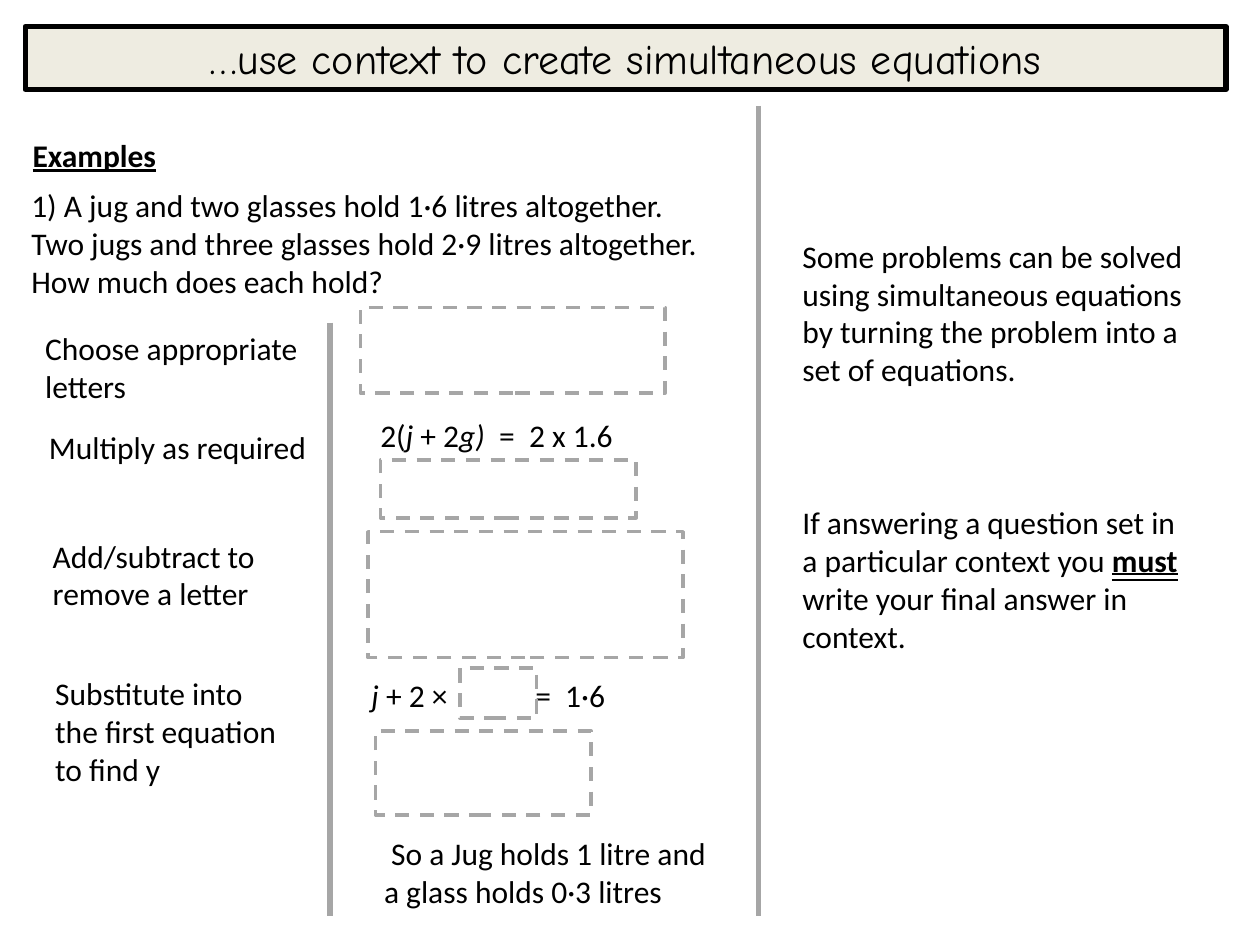
from dataclasses import dataclass

from lxml import etree
from pptx import Presentation
from pptx.dml.color import RGBColor
from pptx.enum.dml import MSO_LINE
from pptx.enum.shapes import MSO_CONNECTOR, MSO_SHAPE
from pptx.enum.text import MSO_ANCHOR, MSO_AUTO_SIZE, MSO_UNDERLINE, PP_ALIGN
from pptx.oxml.ns import qn
from pptx.util import Inches, Pt

RECTANGLE = MSO_SHAPE.RECTANGLE
STRAIGHT = MSO_CONNECTOR.STRAIGHT
DASH = MSO_LINE.DASH
CENTER = PP_ALIGN.CENTER
MIDDLE = MSO_ANCHOR.MIDDLE
GROW = MSO_AUTO_SIZE.SHAPE_TO_FIT_TEXT
SINGLE = MSO_UNDERLINE.SINGLE_LINE
DOUBLE = MSO_UNDERLINE.DOUBLE_LINE

BODY_FONT = "Calibri"
TITLE_FONT = "Comic Neue"
BLACK = "000000"
GRAY = "A6A6A6"
CREAM = "EEECE1"
DIVIDER_BOTTOM = 7.27


@dataclass(frozen=True)
class Box:
    left: float
    top: float
    width: float
    height: float

    def lengths(self):
        return [Inches(value) for value in (self.left, self.top, self.width, self.height)]


@dataclass(frozen=True)
class Run:
    text: str
    bold: bool = False
    italic: bool = False
    underline: MSO_UNDERLINE | None = None


@dataclass(frozen=True)
class Note:
    box: Box
    paragraphs: list[list[Run]]
    wrap: bool = True
    gap: float = 0
    tab: float = 0


NOTES = [
    Note(Box(6.27, 1.83, 3.27, 3.43), [
        [Run("Some problems can be solved using simultaneous equations "
             "by turning the problem into a set of equations.")],
        [Run("If answering a question set in a particular context you "),
         Run("must", bold=True, underline=DOUBLE),
         Run(" write your final answer in context.")],
    ], gap=66),
    Note(Box(0.16, 1.03, 1.19, 0.4),
         [[Run("Examples", bold=True, underline=SINGLE)]], wrap=False),
    Note(Box(0.15, 1.43, 7.45, 1.01), [
        [Run("1) A jug and two glasses hold 1·6 litres altogether.")],
        [Run("Two jugs and three glasses hold 2·9 litres altogether.")],
        [Run("How much does each hold?")],
    ]),
    Note(Box(0.26, 2.56, 2.32, 0.71), [[Run("Choose appropriate letters")]]),
    Note(Box(0.29, 3.35, 2.3, 0.4), [[Run("Multiply as required")]]),
    Note(Box(0.32, 4.21, 1.91, 0.71), [[Run("Add/subtract to remove a letter")]]),
    Note(Box(0.34, 5.3, 2.03, 1.01),
         [[Run("Substitute into the first equation to find y")]]),
    Note(Box(2.92, 3.25, 2.07, 0.4), [[
        Run("2("), Run("j ", italic=True), Run("+ 2"),
        Run("g)  ", italic=True), Run("=  2 x 1.6"),
    ]], wrap=False),
    Note(Box(2.85, 5.32, 2.83, 0.4),
         [[Run("j ", italic=True), Run("+ 2 ×\t=  1·6")]], tab=1.3),
    Note(Box(2.95, 6.57, 2.84, 0.71),
         [[Run(" So a Jug holds 1 litre and a glass holds 0·3 litres")]]),
]

ANSWER_BOXES = [
    Box(2.86, 2.44, 2.42, 0.68),
    Box(2.92, 4.22, 2.5, 1),
    Box(3.02, 3.65, 2.03, 0.46),
    Box(3.65, 5.3, 0.61, 0.4),
    Box(2.98, 5.8, 1.71, 0.67),
]

DIVIDERS = [(2.62, 2.56), (6.02, 0.84)]


def color(hex_value: str) -> RGBColor:
    return RGBColor.from_string(hex_value)


def add_run(paragraph, run: Run, font_name: str = BODY_FONT, size: float = 18) -> None:
    text_run = paragraph.add_run()
    text_run.text = run.text
    font = text_run.font
    font.name = font_name
    font.size = Pt(size)
    font.color.rgb = color(BLACK)
    font.bold = run.bold
    font.italic = run.italic
    if run.underline is not None:
        font.underline = run.underline


def set_tab(paragraph, position: float) -> None:
    properties = paragraph._p.get_or_add_pPr()
    tab_list = etree.SubElement(properties, qn("a:tabLst"))
    etree.SubElement(tab_list, qn("a:tab"), pos=str(Inches(position)), algn="l")


def add_note(slide, note: Note) -> None:
    frame = slide.shapes.add_textbox(*note.box.lengths()).text_frame
    frame.word_wrap = note.wrap
    frame.auto_size = GROW
    for index, runs in enumerate(note.paragraphs):
        paragraph = frame.add_paragraph() if index else frame.paragraphs[0]
        if index and note.gap:
            paragraph.space_before = Pt(note.gap)
        if note.tab:
            set_tab(paragraph, note.tab)
        for run in runs:
            add_run(paragraph, run)


def add_rectangle(slide, box: Box, line_color: str, line_width: float):
    shape = slide.shapes.add_shape(RECTANGLE, *box.lengths())
    shape.shadow.inherit = False
    shape.fill.background()
    shape.line.color.rgb = color(line_color)
    shape.line.width = Pt(line_width)
    return shape


def add_title(slide, text: str) -> None:
    shape = add_rectangle(slide, Box(0.2, 0.21, 9.53, 0.5), BLACK, 3)
    shape.fill.solid()
    shape.fill.fore_color.rgb = color(CREAM)
    frame = shape.text_frame
    frame.word_wrap = True
    frame.auto_size = GROW
    frame.vertical_anchor = MIDDLE
    paragraph = frame.paragraphs[0]
    paragraph.alignment = CENTER
    add_run(paragraph, Run(text), TITLE_FONT, 24)


def add_divider(slide, x: float, top: float) -> None:
    connector = slide.shapes.add_connector(
        STRAIGHT, Inches(x), Inches(top), Inches(x), Inches(DIVIDER_BOTTOM))
    connector.line.color.rgb = color(GRAY)
    connector.line.width = Pt(3)
    etree.SubElement(connector._element.spPr, qn("a:effectLst"))


def main() -> None:
    presentation = Presentation()
    presentation.slide_width = Inches(10)
    presentation.slide_height = Inches(7.5)
    slide = presentation.slides.add_slide(presentation.slide_layouts[6])
    add_title(slide, "…use context to create simultaneous equations")
    for note in NOTES:
        add_note(slide, note)
    for box in ANSWER_BOXES:
        add_rectangle(slide, box, GRAY, 2).line.dash_style = DASH
    for x, top in DIVIDERS:
        add_divider(slide, x, top)
    presentation.save("out.pptx")


if __name__ == "__main__":
    main()
